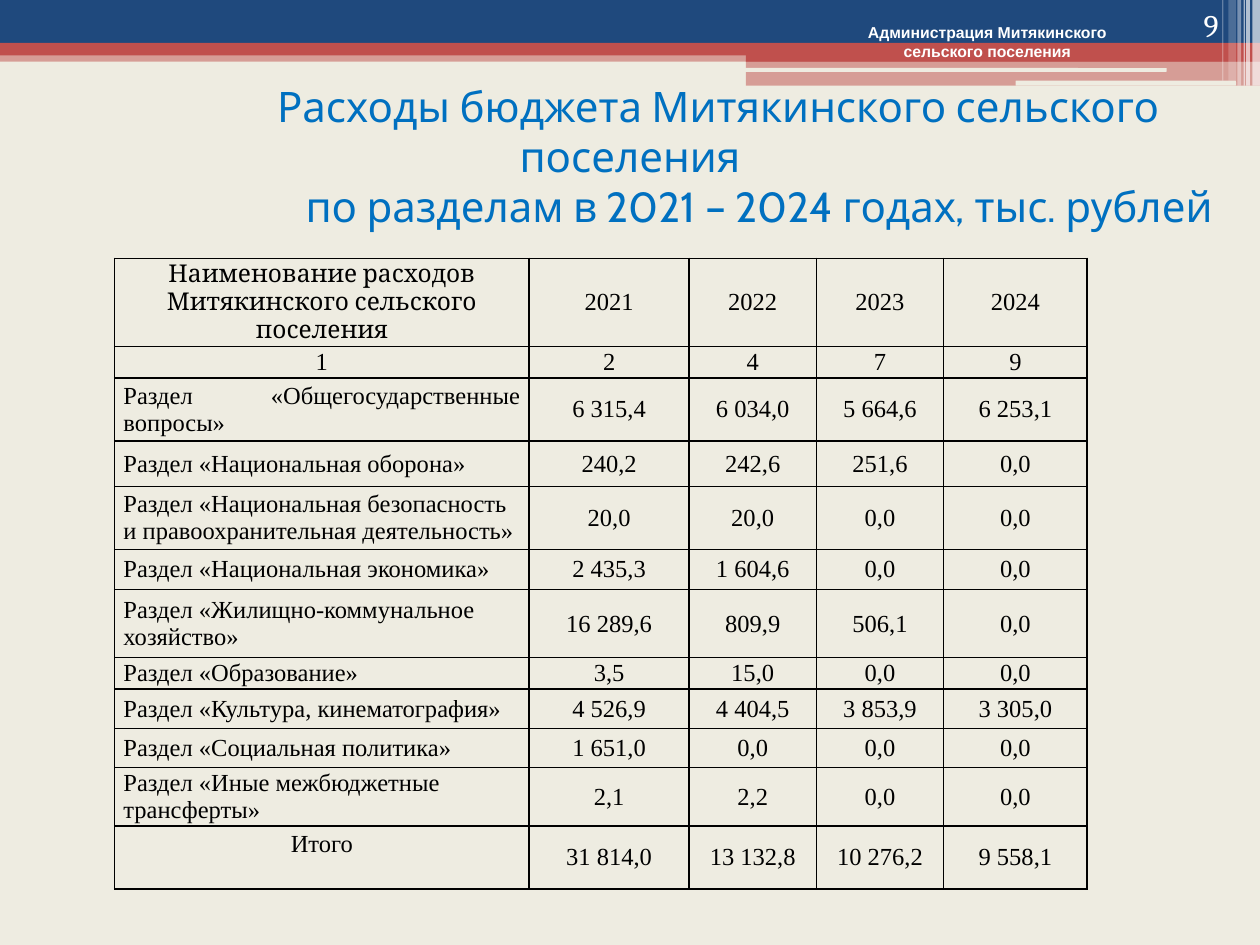
from lxml.etree import SubElement
from pptx import Presentation
from pptx.dml.color import RGBColor
from pptx.enum.shapes import MSO_SHAPE
from pptx.enum.text import MSO_ANCHOR, PP_ALIGN
from pptx.oxml import parse_xml
from pptx.oxml.ns import nsdecls, qn
from pptx.util import Inches, Pt

WIDE, HIGH = 10, 7.5
NAVY, RED, SAND, WHITE = "1F497D", "C0504D", "EEECE1", "FFFFFF"
SKY, BLACK = "0070C0", "000000"

BARS = [
    (0, 0.4, 10, 0.09, RED, 50),
    (0, 0, 10, 0.34, NAVY, 100),
    (0, 0.34, 10, 0.1, RED, 100),
    (5.92, 0.39, 4.08, 0.1, RED, 100),
    (5.92, 0.48, 4.08, 0.2, RED, 50),
]
PILLS = [(5.91, 0.54, 3.35, 0.03), (8.06, 0.64, 1.75, 0.04)]
STRIPES = [
    (9.94, 0.06, 0.68, 65),
    (9.89, 0.03, 0.68, 65),
    (9.87, 0.01, 0.68, 60),
    (9.82, 0.03, 0.68, 40),
    (9.75, 0.06, 0.64, 20),
    (9.7, 0.01, 0.64, 30),
]

COLS = [3.29, 1.27, 1.01, 1.01, 1.14]
ROWS = [
    (0.6, "Наименование расходов Митякинского сельского поселения", "2021", "2022", "2023", "2024"),
    (0.25, "1", "2", "4", "7", "9"),
    (0.5, "Раздел «Общегосударственные вопросы»", "6 315,4", "6 034,0", "5 664,6", "6 253,1"),
    (0.36, "Раздел «Национальная оборона»", "240,2", "242,6", "251,6", "0,0"),
    (0.5, "Раздел «Национальная безопасность и правоохранительная деятельность»",
     "20,0", "20,0", "0,0", "0,0"),
    (0.32, "Раздел «Национальная экономика»", "2 435,3", "1 604,6", "0,0", "0,0"),
    (0.54, "Раздел «Жилищно-коммунальное хозяйство»", "16 289,6", "809,9", "506,1", "0,0"),
    (0.25, "Раздел «Образование»", "3,5", "15,0", "0,0", "0,0"),
    (0.31, "Раздел «Культура, кинематография»", "4 526,9", "4 404,5", "3 853,9", "3 305,0"),
    (0.31, "Раздел «Социальная политика»", "1 651,0", "0,0", "0,0", "0,0"),
    (0.25, "Раздел «Иные межбюджетные трансферты»", "2,1", "2,2", "0,0", "0,0"),
    (0.5, "Итого", "31 814,0", "13 132,8", "10 276,2", "9 558,1"),
]


def paint(fill, tint, alpha=100):
    fill.solid()
    fill.fore_color.rgb = RGBColor.from_string(tint)
    if alpha < 100:
        node = fill._xPr.find(qn("a:solidFill"))[0]
        SubElement(node, qn("a:alpha"), val=str(alpha * 1000))


def style(frame, size, face, tint, align, bold=False):
    for para in frame.paragraphs:
        para.alignment = align
        for run in para.runs:
            font = run.font
            font.size, font.name, font.bold = Pt(size), face, bold
            font.color.rgb = RGBColor.from_string(tint)


def add_bar(slide, x, y, w, h, tint, alpha=100, kind=MSO_SHAPE.RECTANGLE):
    bar = slide.shapes.add_shape(kind, Inches(x), Inches(y), Inches(w), Inches(h))
    bar.shadow.inherit = False
    bar.line.fill.background()
    paint(bar.fill, tint, alpha)


def add_text(slide, x, y, w, h, text, anchor):
    box = slide.shapes.add_textbox(Inches(x), Inches(y), Inches(w), Inches(h))
    frame = box.text_frame
    frame.word_wrap = True
    frame.vertical_anchor = anchor
    frame.text = text
    return frame


def add_band(slide, x, y):
    for left, top, w, h, tint, alpha in BARS:
        add_bar(slide, x + left, y + top, w, h, tint, alpha)
    for left, top, w, h in PILLS:
        add_bar(slide, x + left, y + top, w, h, SAND, kind=MSO_SHAPE.ROUNDED_RECTANGLE)
    for left, w, h, alpha in STRIPES:
        add_bar(slide, x + left, y, w, h, WHITE, alpha)
    owner = add_text(slide, x + 6.28, y + 0.13, 3.11, 0.4,
                     "Администрация Митякинского\nсельского поселения", MSO_ANCHOR.TOP)
    style(owner, 9, "Arial", WHITE, PP_ALIGN.CENTER, True)
    number = add_text(slide, x + 8.94, y, 0.83, 0.4, "9", MSO_ANCHOR.BOTTOM)
    style(number, 18, "Cambria", WHITE, PP_ALIGN.RIGHT)


def add_title(slide, x, y, w, h):
    frame = add_text(slide, x, y, w, h,
                     "Расходы бюджета Митякинского сельского поселения\n"
                     "по разделам в 2021 – 2024 годах, тыс. рублей", MSO_ANCHOR.MIDDLE)
    style(frame, 24, "Cabin", SKY, PP_ALIGN.CENTER)
    first, last = frame.paragraphs
    first._p.get_or_add_pPr().set("indent", str(Inches(1.4)))
    last._p.get_or_add_pPr().set("marL", str(Inches(2.05)))


def add_border(cell):
    props = cell._tc.get_or_add_tcPr()
    for at, side in enumerate(("lnL", "lnR", "lnT", "lnB")):
        props.insert(at, parse_xml(
            f'<a:{side} {nsdecls("a")} w="{Pt(1)}"><a:solidFill>'
            f'<a:srgbClr val="{BLACK}"/></a:solidFill></a:{side}>'))


def name_align(row):
    if row in (0, 1, len(ROWS) - 1):
        return PP_ALIGN.CENTER
    return PP_ALIGN.JUSTIFY if row == 2 else PP_ALIGN.LEFT


def add_costs(slide, x, y, w, h):
    table = slide.shapes.add_table(
        len(ROWS), len(COLS), Inches(x), Inches(y), Inches(w), Inches(h)).table
    table.first_row = table.horz_banding = False
    for col, width in zip(table.columns, COLS):
        col.width = Inches(width)
    for r, (height, *texts) in enumerate(ROWS):
        table.rows[r].height = Inches(height)
        for c, text in enumerate(texts):
            cell = table.cell(r, c)
            cell.fill.background()
            cell.margin_left = cell.margin_right = Inches(0.07)
            cell.margin_top = cell.margin_bottom = 0
            cell.vertical_anchor = MSO_ANCHOR.MIDDLE
            cell.text_frame.text = text
            face = "Cambria" if r == c == 0 else "Times New Roman"
            align = PP_ALIGN.CENTER if c else name_align(r)
            style(cell.text_frame, 14, face, BLACK, align)
            add_border(cell)
    table.cell(len(ROWS) - 1, 0).margin_bottom = Inches(0.21)


def main():
    deck = Presentation()
    deck.slide_width, deck.slide_height = Inches(WIDE), Inches(HIGH)
    slide = deck.slides.add_slide(deck.slide_layouts[6])
    paint(slide.background.fill, SAND)
    add_band(slide, 0, 0)
    add_title(slide, 0, 0.84, WIDE, 0.79)
    add_costs(slide, 0.91, 2.05, sum(COLS), sum(row[0] for row in ROWS))
    deck.save("out.pptx")


if __name__ == "__main__":
    main()
